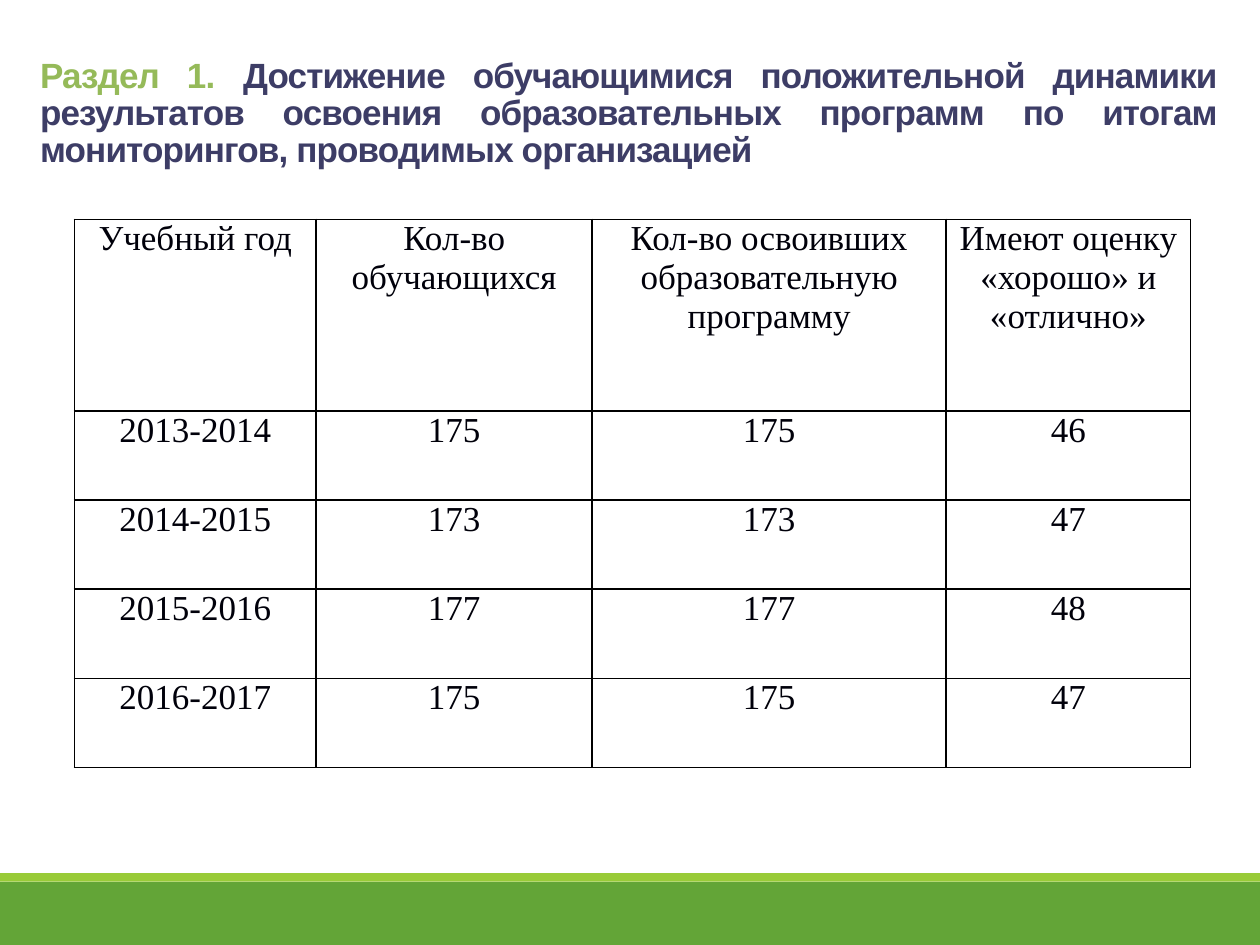
from dataclasses import dataclass
from lxml.etree import SubElement as Sub
from pptx import Presentation
from pptx.dml.color import RGBColor as Rgb
from pptx.enum.text import MSO_ANCHOR as Anchor, PP_ALIGN as Align
from pptx.oxml.ns import qn
from pptx.util import Inches, Pt


@dataclass(frozen=True)
class Theme:
    head: str = "Arial"
    body: str = "Times New Roman"
    size: int = 20
    tight: int = -50
    line: int = 1
    green: str = "63A537"
    lime: str = "99CB38"
    sage: str = "95BA59"
    navy: str = "3D3D66"
    ink: str = "00000A"
    rule: str = "000000"


THEME = Theme()
WIDE, HIGH = 10, 7.5
TITLE = (
    ("Раздел 1. ", THEME.sage),
    ("Достижение обучающимися положительной динамики результатов освоения "
     "образовательных программ по итогам мониторингов, проводимых организацией",
     THEME.navy),
)
ROWS = (
    ("Учебный год", "Кол-во обучающихся",
     "Кол-во освоивших образовательную программу",
     "Имеют оценку «хорошо» и «отлично»"),
    ("2013-2014", "175", "175", "46"),
    ("2014-2015", "173", "173", "47"),
    ("2015-2016", "177", "177", "48"),
    ("2016-2017", "175", "175", "47"),
)
COLS = (1.92, 2.19, 2.81, 1.94)
TALL = (1.53,) + (0.71,) * 4


def color(code):
    return Rgb.from_string(code)


def style(par, face, align):
    par.alignment = align
    par.font.name = face
    par.font.size = Pt(THEME.size)


def footer(slide, box):
    left, top, width, height = box
    strip = height * 0.12
    bands = ((top + strip, height - strip, THEME.green),
             (top, strip, THEME.lime))
    for y, tall, fill in bands:
        band = slide.shapes.add_shape(1, *map(Inches, (left, y, width, tall)))
        band.shadow.inherit = False
        band.fill.solid()
        band.fill.fore_color.rgb = color(fill)
        band.line.fill.background()


def title(slide, box):
    frame = slide.shapes.add_textbox(*map(Inches, box)).text_frame
    frame.word_wrap = True
    frame.vertical_anchor = Anchor.TOP
    par = frame.paragraphs[0]
    par.line_spacing = 0.88
    style(par, THEME.head, Align.JUSTIFY)
    par.font.bold = True
    for text, tint in TITLE:
        run = par.add_run()
        run.text = text
        run.font.color.rgb = color(tint)
        run.font._element.set("spc", str(THEME.tight))


def border(cell):
    props = cell._tc.get_or_add_tcPr()
    for at, side in enumerate(("a:lnL", "a:lnR", "a:lnT", "a:lnB")):
        edge = props.makeelement(qn(side), {"w": str(Pt(THEME.line))})
        props.insert(at, edge)
        fill = Sub(edge, qn("a:solidFill"))
        Sub(fill, qn("a:srgbClr"), val=THEME.rule)


def grid(slide, box):
    table = slide.shapes.add_table(
        len(ROWS), len(COLS), *map(Inches, box)).table
    table.first_row = table.horz_banding = False
    for col, share in zip(table.columns, COLS):
        col.width = Inches(box[2] * share / sum(COLS))
    for row, share, texts in zip(table.rows, TALL, ROWS):
        row.height = Inches(box[3] * share / sum(TALL))
        for cell, text in zip(row.cells, texts):
            cell.text = text
            cell.fill.background()
            cell.margin_left = cell.margin_right = Inches(0.07)
            cell.margin_top = cell.margin_bottom = 0
            par = cell.text_frame.paragraphs[0]
            style(par, THEME.body, Align.CENTER)
            par.font.color.rgb = color(THEME.ink)
            border(cell)


def main():
    deck = Presentation()
    deck.slide_width, deck.slide_height = Inches(WIDE), Inches(HIGH)
    slide = deck.slides.add_slide(deck.slide_layouts[6])
    footer(slide, (0, HIGH * 0.924, WIDE, HIGH * 0.076))
    title(slide, (WIDE * 0.022, HIGH * 0.056, WIDE * 0.953, HIGH * 0.144))
    grid(slide, (WIDE * 0.059, HIGH * 0.232, WIDE * 0.886, HIGH * 0.58))
    deck.save("out.pptx")


if __name__ == "__main__":
    main()
